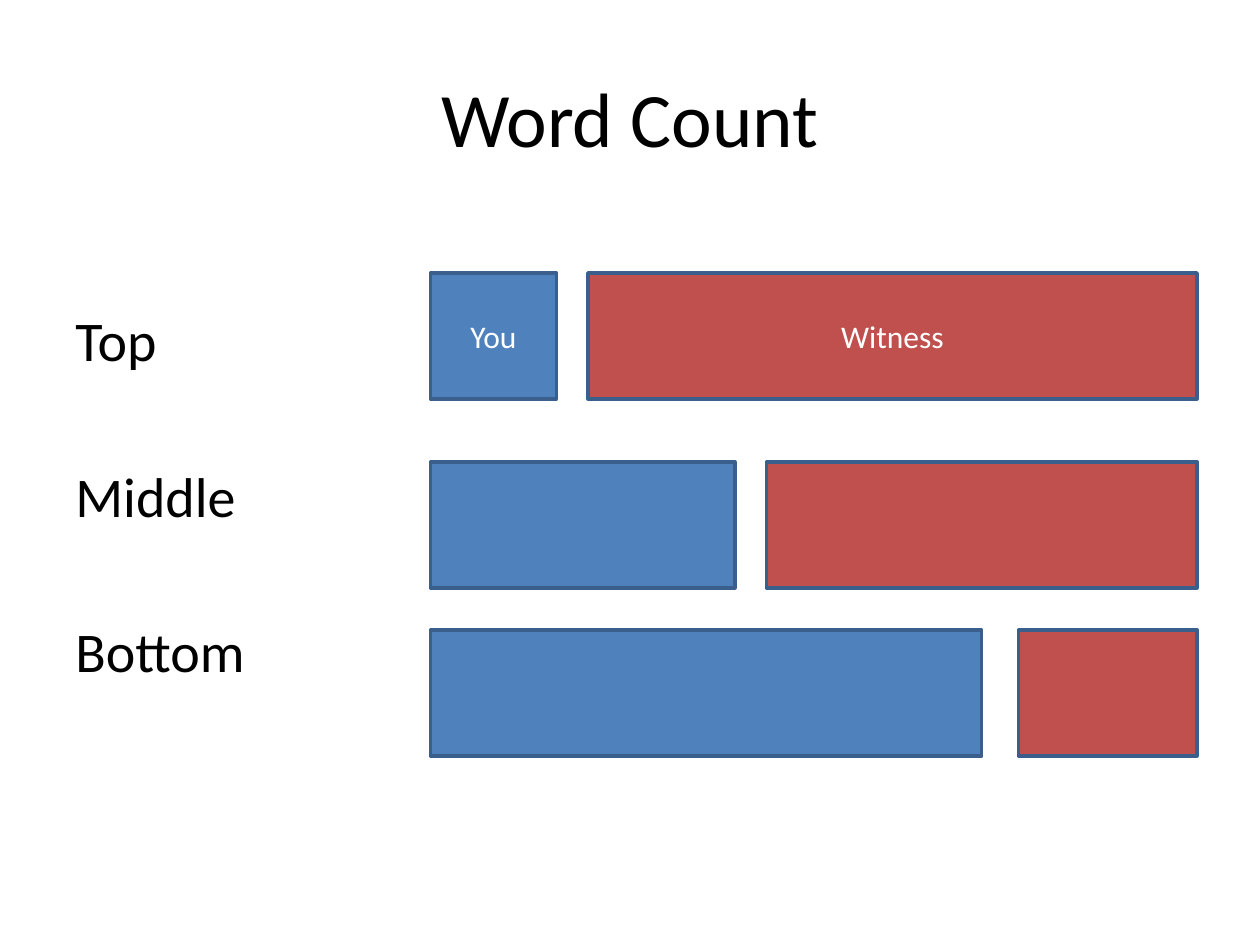
"""Build the Word Count slide: shares of words for you and the witness."""
from pptx import Presentation
from pptx.dml.color import RGBColor
from pptx.enum import shapes, text
from pptx.util import Pt

BLACK = RGBColor(0x00, 0x00, 0x00)
WHITE = RGBColor(0xFF, 0xFF, 0xFF)
BLUE = RGBColor(0x4F, 0x81, 0xBD)
RED = RGBColor(0xC0, 0x50, 0x4D)
OUTLINE = RGBColor(0x3A, 0x5F, 0x8C)

MARGIN, CONTENT_WIDTH = 36, 648
BARS_LEFT, BARS_RIGHT, BAR_HEIGHT = 246, 684, 72


def style(paragraph, size, color, align):
    paragraph.alignment = align
    for run in paragraph.runs:
        run.font.name = "Calibri"
        run.font.size = Pt(size)
        run.font.color.rgb = color


def add_bar(left, right, top, fill, speaker):
    bar = slide.shapes.add_shape(
        shapes.MSO_SHAPE.RECTANGLE, Pt(left), Pt(top), Pt(right - left), Pt(BAR_HEIGHT))
    bar.shadow.inherit = False
    bar.fill.solid()
    bar.fill.fore_color.rgb = fill
    bar.line.color.rgb = OUTLINE
    bar.line.width = Pt(2)
    if speaker:
        bar.text_frame.text = speaker
        bar.text_frame.vertical_anchor = text.MSO_ANCHOR.MIDDLE
        style(bar.text_frame.paragraphs[0], 18, WHITE, text.PP_ALIGN.CENTER)


deck = Presentation()
deck.slide_width, deck.slide_height = Pt(720), Pt(540)
slide = deck.slides.add_slide(deck.slide_layouts[6])

title = slide.shapes.add_textbox(Pt(MARGIN), Pt(21.6), Pt(CONTENT_WIDTH), Pt(90)).text_frame
title.word_wrap = True
title.vertical_anchor = text.MSO_ANCHOR.MIDDLE
title.text = "Word Count"
style(title.paragraphs[0], 44, BLACK, text.PP_ALIGN.CENTER)

levels = slide.shapes.add_textbox(Pt(MARGIN), Pt(126), Pt(CONTENT_WIDTH), Pt(356.4)).text_frame
levels.word_wrap = True
levels.margin_top = Pt(48.5)
levels.text = "Top\nMiddle\nBottom"
for index, level in enumerate(levels.paragraphs):
    level.space_before = Pt(50.6 if index else 0)
    style(level, 32, BLACK, text.PP_ALIGN.LEFT)

rows = [
    (156, 318, 336, "You", "Witness"),
    (264, 420, 438, "", ""),
    (360, 561, 582, "", ""),
]
for top, you_right, witness_left, you, witness in rows:
    add_bar(BARS_LEFT, you_right, top, BLUE, you)
    add_bar(witness_left, BARS_RIGHT, top, RED, witness)

deck.save("out.pptx")
